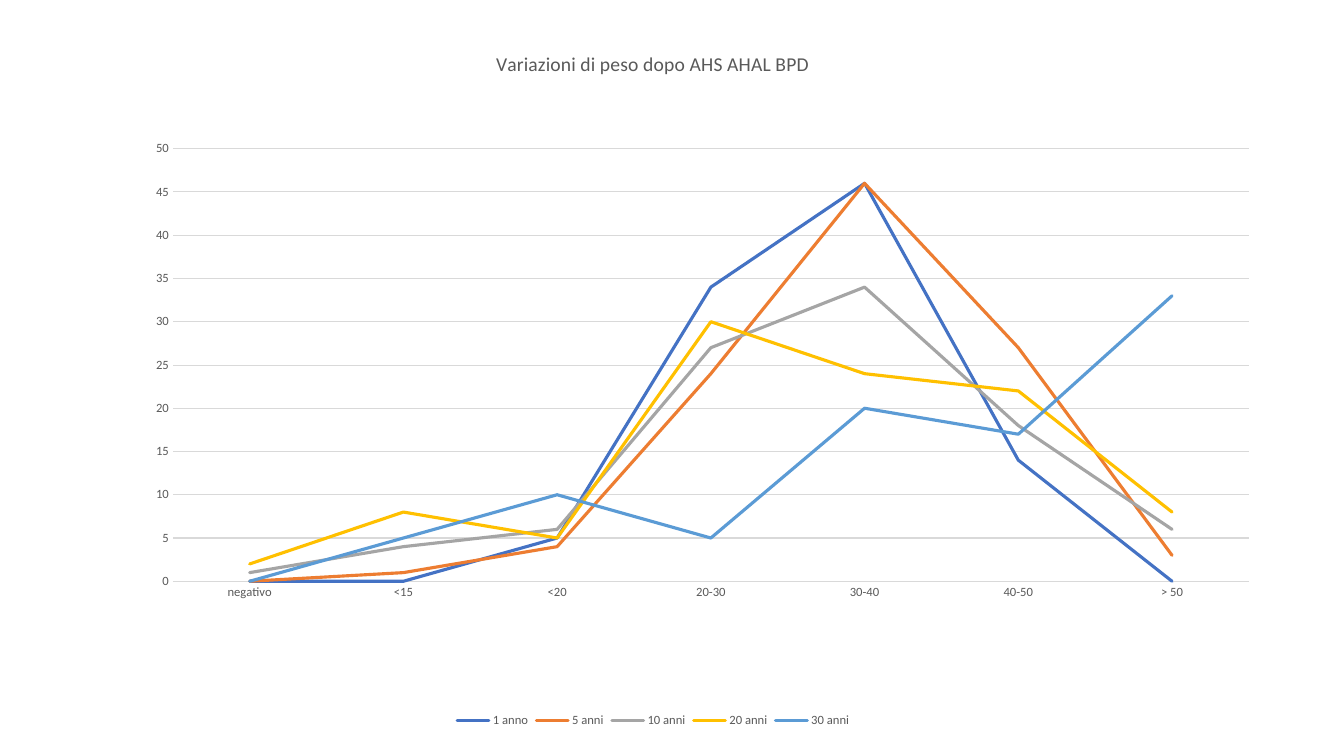
from dataclasses import dataclass

from lxml import etree
from pptx import Presentation
from pptx.chart.data import CategoryChartData
from pptx.dml.color import RGBColor
from pptx.enum.chart import XL_CHART_TYPE, XL_LEGEND_POSITION, XL_TICK_MARK
from pptx.oxml.ns import qn
from pptx.util import Pt

LINE_CHART = XL_CHART_TYPE.LINE
LEGEND_BOTTOM = XL_LEGEND_POSITION.BOTTOM
NO_TICK = XL_TICK_MARK.NONE
BLANK_LAYOUT = 6

CHART_WIDTH, CHART_HEIGHT = 851.5, 502.5
WEIGHT_BANDS = ["negativo", "<15", "<20", "20-30", "30-40", "40-50", "> 50"]
FOLLOW_UPS = {
    "1 anno": (0, 0, 5, 34, 46, 14, 0),
    "5 anni": (0, 1, 4, 24, 46, 27, 3),
    "10 anni": (1, 4, 6, 27, 34, 18, 6),
    "20 anni": (2, 8, 5, 30, 24, 22, 8),
    "30 anni": (0, 5, 10, 5, 20, 17, 33),
}


@dataclass(frozen=True)
class Theme:
    font: str = "Calibri"
    text: str = "595959"
    grid: str = "D9D9D9"
    series: tuple = ("4472C4", "ED7D31", "A5A5A5", "FFC000", "5B9BD5")
    title_size: float = 14
    label_size: float = 9
    grid_width: float = 0.75
    series_width: float = 2.25


def place(element, index, left, top, size=None):
    """Give a chart part a manual layout, in points from the chart's corner."""
    settings = {"xMode": "edge", "yMode": "edge",
                "x": left / CHART_WIDTH, "y": top / CHART_HEIGHT}
    if size:
        settings = {"layoutTarget": "inner", **settings,
                    "w": size[0] / CHART_WIDTH, "h": size[1] / CHART_HEIGHT}
    layout = element.find(qn("c:layout"))
    if layout is None:
        layout = etree.Element(qn("c:layout"))
        element.insert(index, layout)
    manual = etree.SubElement(layout, qn("c:manualLayout"))
    for tag, value in settings.items():
        etree.SubElement(manual, qn(f"c:{tag}")).set("val", str(value))


class SlideBuilder:
    def __init__(self, slide, theme):
        self.slide = slide
        self.theme = theme

    def style_font(self, font, size):
        font.name = self.theme.font
        font.size = Pt(size)
        font.bold = False
        font.color.rgb = RGBColor.from_string(self.theme.text)

    def style_line(self, line, color, width):
        line.color.rgb = RGBColor.from_string(color)
        line.width = Pt(width)

    def line_chart(self, categories, series, left, top):
        data = CategoryChartData()
        data.categories = categories
        for name, values in series.items():
            data.add_series(name, values)
        chart = self.slide.shapes.add_chart(
            LINE_CHART, Pt(left), Pt(top), Pt(CHART_WIDTH), Pt(CHART_HEIGHT), data).chart
        self.style_font(chart.font, self.theme.label_size)
        for curve, color in zip(chart.plots[0].series, self.theme.series):
            curve.smooth = False
            self.style_line(curve.format.line, color, self.theme.series_width)
            outline = curve._element.find(qn("c:spPr")).find(qn("a:ln"))
            outline.set("cap", "rnd")
            etree.SubElement(outline, qn("a:round"))
        place(chart.plots[0]._element.getparent(), 0, 82.5, 86.25, size=(769, 309))
        self.axes(chart)
        self.legend(chart)
        return chart

    def axes(self, chart):
        theme = self.theme
        for axis in (chart.category_axis, chart.value_axis):
            axis.major_tick_mark = axis.minor_tick_mark = NO_TICK
            self.style_font(axis.tick_labels.font, theme.label_size)
        self.style_line(chart.category_axis.format.line, theme.grid, theme.grid_width)
        value_axis = chart.value_axis
        value_axis.minimum_scale, value_axis.maximum_scale = 0, 50
        value_axis.major_unit = 5
        value_axis.format.line.fill.background()
        value_axis.has_major_gridlines = True
        self.style_line(value_axis.major_gridlines.format.line, theme.grid, theme.grid_width)

    def legend(self, chart):
        chart.has_legend = True
        chart.legend.position = LEGEND_BOTTOM
        chart.legend.include_in_layout = False
        self.style_font(chart.legend.font, self.theme.label_size)

    def chart_title(self, chart, wording):
        chart.has_title = True
        title = chart.chart_title
        title.include_in_layout = False
        paragraph = title.text_frame.paragraphs[0]
        paragraph.text = wording
        self.style_font(paragraph.runs[0].font, self.theme.title_size)
        place(title._element, 1, 311, 13.5)


def main():
    deck = Presentation()
    deck.slide_width, deck.slide_height = Pt(960), Pt(540)
    slide = deck.slides.add_slide(deck.slide_layouts[BLANK_LAYOUT])
    builder = SlideBuilder(slide, Theme())
    weight_chart = builder.line_chart(WEIGHT_BANDS, FOLLOW_UPS, 41, 20)
    builder.chart_title(weight_chart, "Variazioni di peso dopo AHS AHAL BPD")
    deck.save("out.pptx")


if __name__ == "__main__":
    main()
